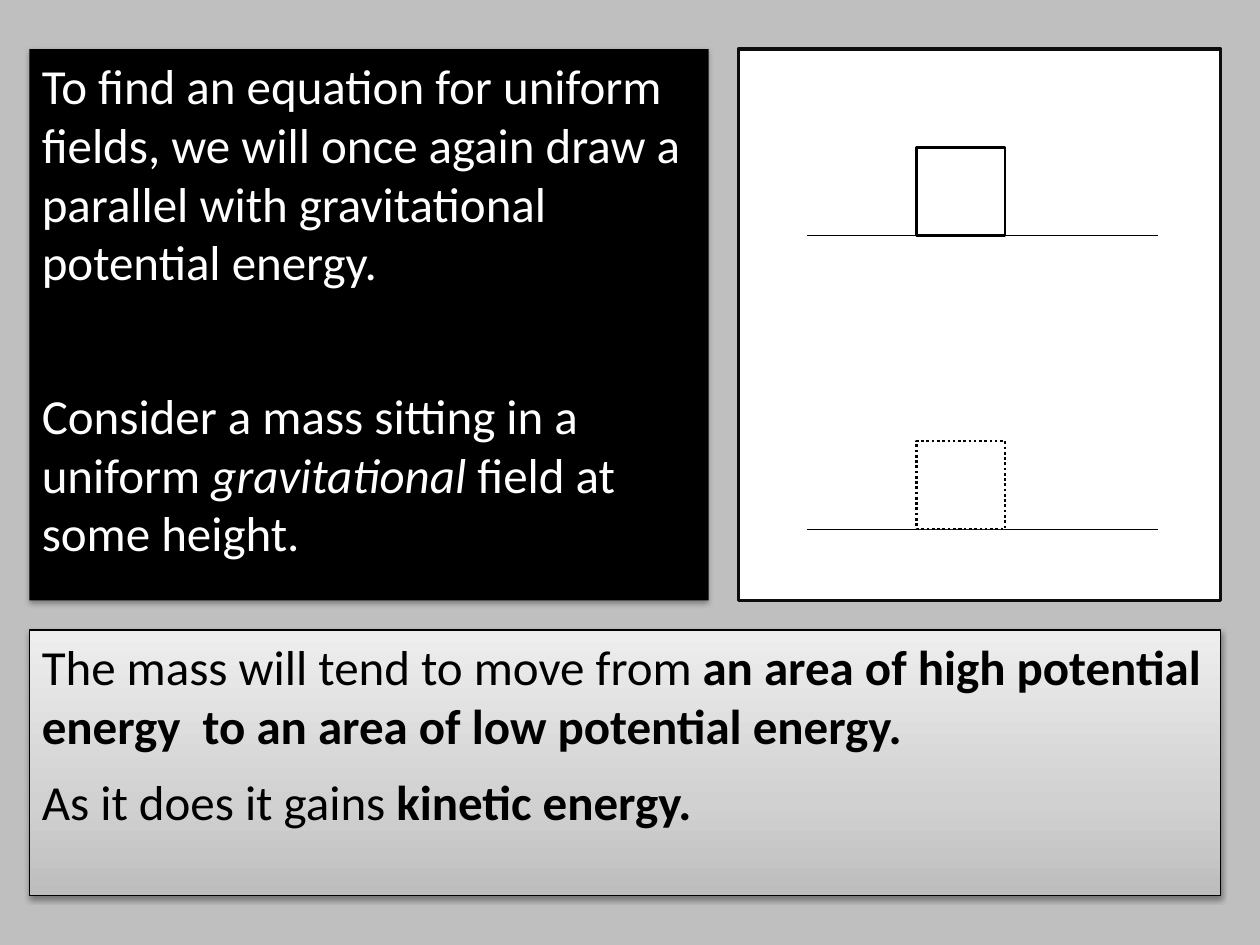
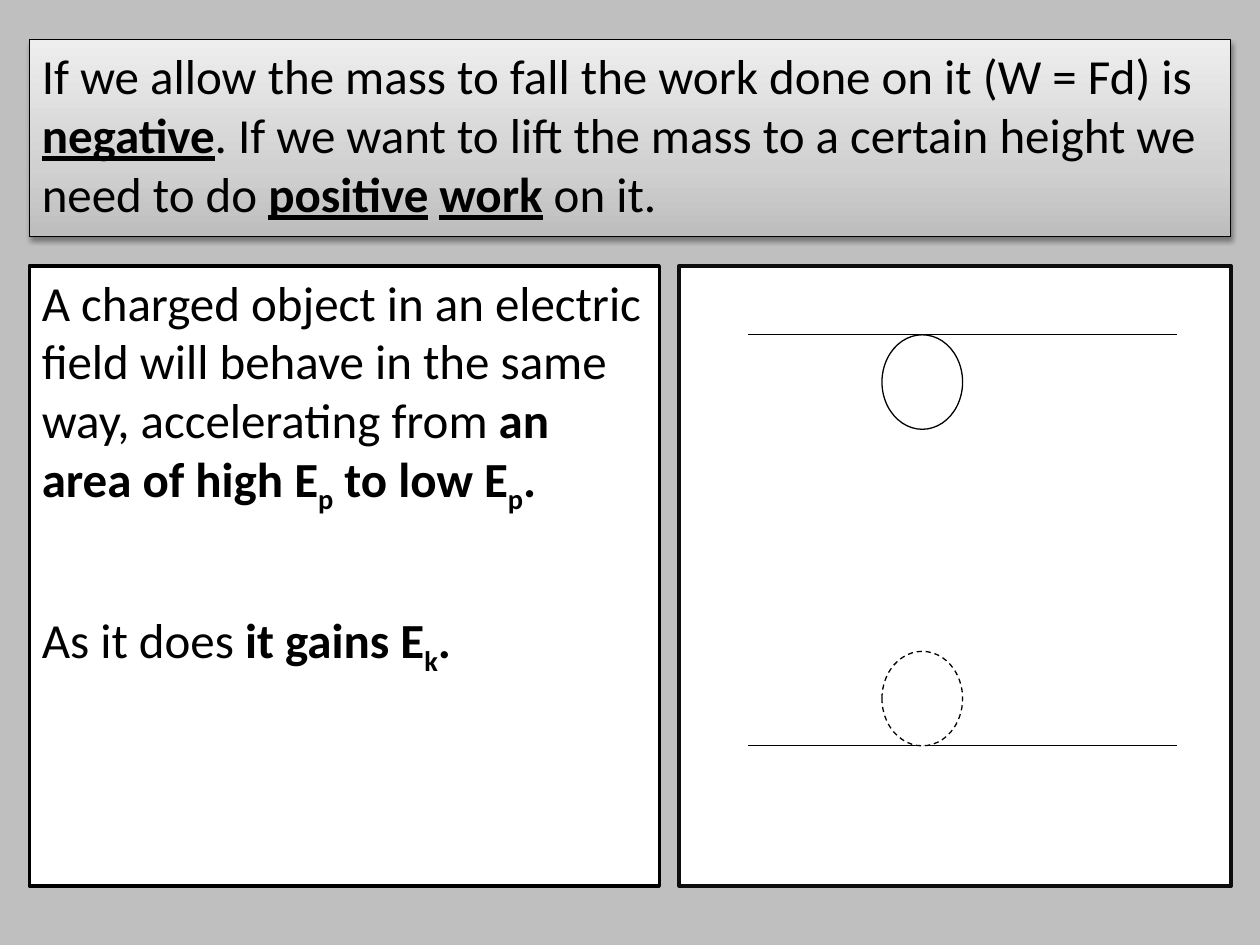
"""Build two slides on potential energy in uniform fields."""
from copy import deepcopy

from lxml import etree
from pptx import Presentation
from pptx.dml.color import RGBColor
from pptx.enum.dml import MSO_LINE
from pptx.enum.shapes import MSO_CONNECTOR, MSO_SHAPE
from pptx.enum.text import MSO_ANCHOR, PP_ALIGN
from pptx.oxml.ns import qn
from pptx.util import Pt

RECTANGLE, OVAL = MSO_SHAPE.RECTANGLE, MSO_SHAPE.OVAL
STRAIGHT = MSO_CONNECTOR.STRAIGHT
DOTTED, DASHED = MSO_LINE.ROUND_DOT, MSO_LINE.DASH
LEFT, TOP = PP_ALIGN.LEFT, MSO_ANCHOR.TOP

BLACK = RGBColor(0x00, 0x00, 0x00)
NEAR_BLACK = RGBColor(0x0D, 0x0D, 0x0D)
WHITE = RGBColor(0xFF, 0xFF, 0xFF)
GREY = RGBColor(0xBF, 0xBF, 0xBF)
SILVER = (
    (0, RGBColor(0xBD, 0xBD, 0xBD)),
    (0.35, RGBColor(0xD1, 0xD1, 0xD1)),
    (1, RGBColor(0xEE, 0xEE, 0xEE)),
)

FONT = "Calibri"
TEXT_SIZE = 28
PARA_GAP = 10
WIDE_GAP = 54
MARGIN = 16.8
HAIRLINE = 0.75
FRAME = 2
BOLD = {"bold": True}
STRESSED = {"bold": True, "underline": True}
SUBSCRIPT = {"bold": True, "baseline": -25}


def add_span(para, text, color=BLACK, bold=False, italic=False, underline=False, baseline=0):
    span = para.add_run()
    span.text = text
    font = span.font
    font.name, font.size = FONT, Pt(TEXT_SIZE)
    font.bold, font.italic, font.underline = bold, italic, underline
    font.color.rgb = color
    if baseline:
        font._element.set("baseline", str(baseline * 1000))


class Deck:
    def __init__(self):
        self.deck = Presentation()
        self.deck.slide_width, self.deck.slide_height = Pt(720), Pt(540)
        background = self.deck.slide_master.background.fill
        background.solid()
        background.fore_color.rgb = GREY
        self.page = None

    def add_page(self):
        self.page = self.deck.slides.add_slide(self.deck.slide_layouts[6])

    def add_box(self, left, top, width, height, kind=RECTANGLE, fill=WHITE,
                line=BLACK, weight=HAIRLINE, dash=None):
        box = self.page.shapes.add_shape(kind, Pt(left), Pt(top), Pt(width), Pt(height))
        box.shadow.inherit = False
        box.fill.solid()
        box.fill.fore_color.rgb = fill
        if line is None:
            box.line.fill.background()
        else:
            box.line.color.rgb = line
            box.line.width = Pt(weight)
            if dash is not None:
                box.line.dash_style = dash
        return box

    def add_line(self, left, right, height):
        line = self.page.shapes.add_connector(
            STRAIGHT, Pt(left), Pt(height), Pt(right), Pt(height))
        line.line.color.rgb = BLACK
        line.line.width = Pt(HAIRLINE)
        etree.SubElement(line._element.spPr, qn("a:effectLst"))

    def add_text(self, box, paras, gap=PARA_GAP, color=BLACK):
        frame = box.text_frame
        frame.word_wrap = True
        frame.vertical_anchor = TOP
        for index, spans in enumerate(paras):
            para = frame.paragraphs[0] if index == 0 else frame.add_paragraph()
            para.alignment = LEFT
            para.space_after = Pt(gap)
            for text, style in spans:
                add_span(para, text, color=color, **style)

    def add_shadow(self, box, distance, opacity):
        effects = box._element.spPr.find(qn("a:effectLst"))
        shadow = etree.SubElement(
            effects, qn("a:outerShdw"), blurRad=str(Pt(3.1)),
            dist=str(Pt(distance)), dir="5400000", rotWithShape="0")
        color = etree.SubElement(shadow, qn("a:srgbClr"), val=str(BLACK))
        etree.SubElement(color, qn("a:alpha"), val=str(opacity * 1000))

    def add_silver_panel(self, left, top, width, height, paras):
        box = self.add_box(left, top, width, height)
        box.fill.gradient()
        box.fill.gradient_angle = 90
        stops = box._element.spPr.find(".//" + qn("a:gsLst"))
        stops.insert(1, deepcopy(stops[0]))
        for stop, (position, color) in zip(box.fill.gradient_stops, SILVER):
            stop.position = position
            stop.color.rgb = color
        self.add_shadow(box, 1.6, 38)
        self.add_text(box, paras)

    def add_levels(self, left, right, levels):
        for height in levels:
            self.add_line(left, right, height)

    def save(self):
        self.deck.save("out.pptx")


def add_gravity_page(deck):
    deck.add_page()
    top, height = 28.1, 315
    deck.add_box(421.9, top, 275.6, height, line=NEAR_BLACK, weight=FRAME)
    intro = deck.add_box(MARGIN, top, 388.1, height, fill=BLACK, line=None)
    deck.add_shadow(intro, 1.8, 35)
    deck.add_text(intro, [
        [("To find an equation for uniform fields, we will once again draw a "
          "parallel with gravitational potential energy.", {})],
        [("Consider a mass sitting in a uniform ", {}),
         ("gravitational", {"italic": True}),
         (" field at some height.", {})],
    ], gap=WIDE_GAP, color=WHITE)
    deck.add_silver_panel(MARGIN, 360, 680.6, 151.9, [
        [("The mass will tend to move from ", {}),
         ("an area of high potential energy  to an area of low potential energy.", BOLD)],
        [("As it does it gains ", {}), ("kinetic energy.", BOLD)],
    ])

    high, low = 134.6, 302.4
    side = 50.4
    deck.add_levels(461.3, 661.5, (high, low))
    for level, dash in ((high, None), (low, DOTTED)):
        deck.add_box(523.9, level - side, side, side, weight=1.5, dash=dash)


def add_electric_page(deck):
    deck.add_page()
    top, height = 151.9, 354.4
    deck.add_box(388.1, top, 315.4, height, line=NEAR_BLACK, weight=FRAME)
    deck.add_silver_panel(MARGIN, 22.5, 686.4, 112.5, [
        [("If we allow the mass to fall the work done on it (W = Fd) is ", {}),
         ("negative", STRESSED),
         (". If we want to lift the mass to a certain height we need to do ", {}),
         ("positive", STRESSED), (" ", {}), ("work", STRESSED),
         (" on it.", {})],
    ])
    charge_text = deck.add_box(MARGIN, top, 360, height, weight=FRAME)
    deck.add_text(charge_text, [
        [("A charged object in an electric field will behave in the same way, "
          "accelerating from ", {}),
         ("an area of high E", BOLD), ("p", SUBSCRIPT),
         (" to low E", BOLD), ("p", SUBSCRIPT), (".", BOLD)],
        [("As it does ", {}), ("it gains E", BOLD), ("k", SUBSCRIPT), (".", BOLD)],
    ], gap=WIDE_GAP)

    high, low = 191.3, 426.2
    charge_width, charge_height = 46.1, 54
    deck.add_levels(427.5, 672.5, (high, low))
    for charge_top, dash in ((high, None), (low - charge_height, DASHED)):
        deck.add_box(504, charge_top, charge_width, charge_height, kind=OVAL, dash=dash)


def main():
    deck = Deck()
    add_gravity_page(deck)
    add_electric_page(deck)
    deck.save()


if __name__ == "__main__":
    main()
